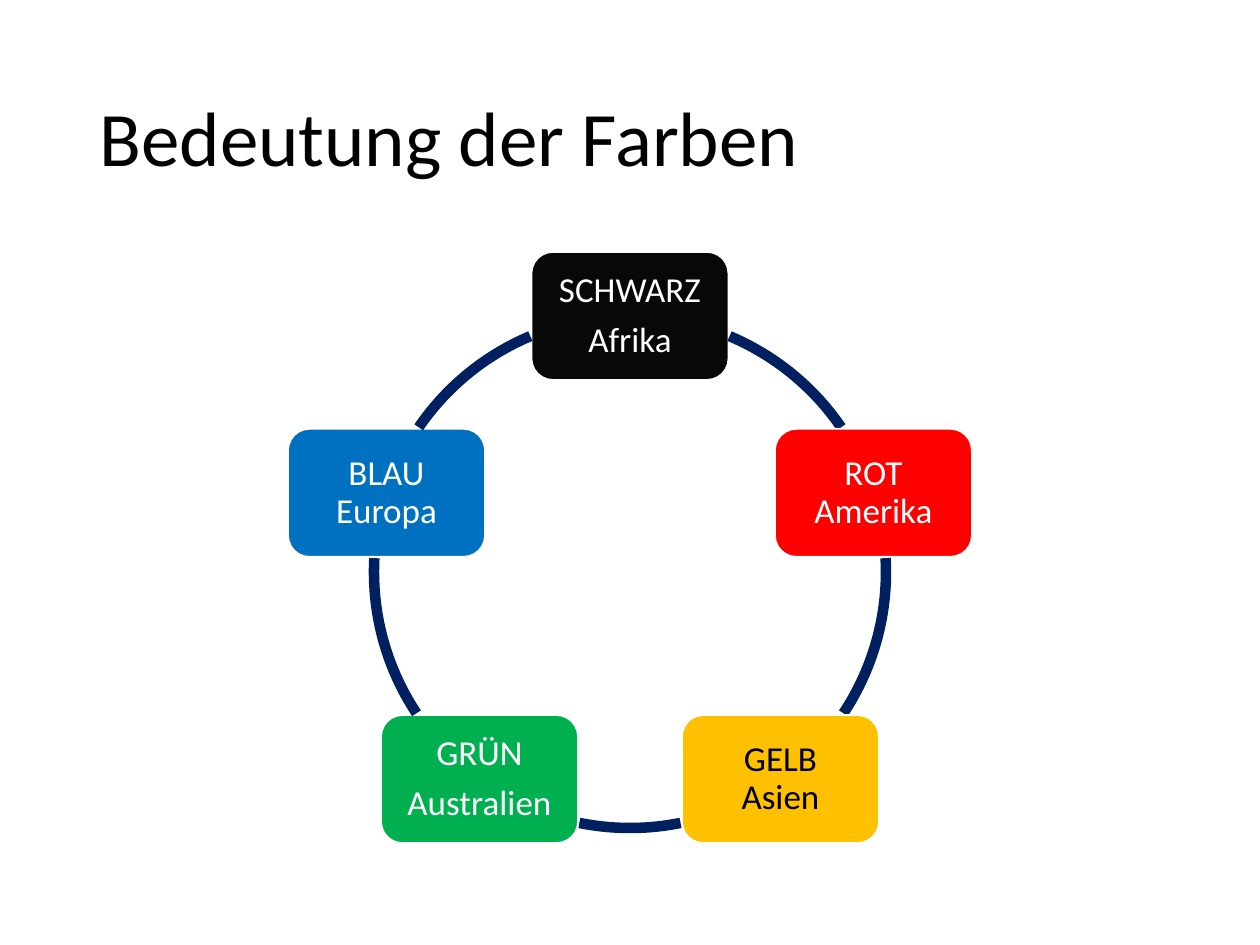
from dataclasses import dataclass
from math import cos, radians, sin

from pptx import Presentation
from pptx.dml.color import RGBColor as Rgb
from pptx.enum.shapes import MSO_SHAPE as Preset
from pptx.enum.text import MSO_ANCHOR as Anchor, PP_ALIGN as Align
from pptx.util import Emu, Pt

PX_PER_INCH = 126


@dataclass(frozen=True)
class Theme:
    font: str = "Calibri"
    title_size: int = 44
    box_size: int = 20
    paragraph_gap: int = 7
    line_spacing: float = 0.9
    arc_width: int = 6
    border_width: int = 1
    dark: str = "000000"
    light: str = "FFFFFF"
    ring: str = "002060"
    black: str = "080808"
    red: str = "FF0000"
    yellow: str = "FFC000"
    green: str = "00B050"
    blue: str = "0070C0"


THEME = Theme()

# Ring and box geometry in px
CENTER_X, CENTER_Y, RADIUS = 630, 572, 256
BOX_W, BOX_H, BOX_INSET = 197, 128, 16

# Colour meanings, clockwise from the top: paragraphs, fill, text colour
CONTINENTS = [
    (("SCHWARZ", "Afrika"), THEME.black, THEME.light),
    (("ROT\vAmerika",), THEME.red, THEME.light),
    (("GELB\vAsien",), THEME.yellow, THEME.dark),
    (("GRÜN", "Australien"), THEME.green, THEME.light),
    (("BLAU\vEuropa",), THEME.blue, THEME.light),
]
# Visible ring pieces after each box, in degrees clockwise from the top
ARCS = [(22.9, 55.6), (86.9, 123.5), (168.6, 191.4), (236.5, 273.1), (304.4, 337.1)]


def px(length):
    return Emu(round(length * 914400 / PX_PER_INCH))


def style_paragraph(paragraph, size, color, align):
    paragraph.alignment = align
    paragraph.line_spacing = THEME.line_spacing
    for run in paragraph.runs:
        run.font.name = THEME.font
        run.font.size = Pt(size)
        run.font.color.rgb = Rgb.from_string(color)


def set_title(slide, text):
    title = slide.shapes.title
    title.left, title.top, title.width, title.height = map(px, (87, 50, 1086, 183))
    title.text_frame.text = text
    title.text_frame.vertical_anchor = Anchor.MIDDLE
    style_paragraph(title.text_frame.paragraphs[0], THEME.title_size, THEME.dark, Align.LEFT)


def add_continent(slide, angle, lines, fill, text_color):
    center_x = CENTER_X + RADIUS * sin(radians(angle))
    center_y = CENTER_Y - RADIUS * cos(radians(angle))
    box = slide.shapes.add_shape(
        Preset.ROUNDED_RECTANGLE,
        px(center_x - BOX_W / 2), px(center_y - BOX_H / 2), px(BOX_W), px(BOX_H))
    box.shadow.inherit = False
    box.fill.solid()
    box.fill.fore_color.rgb = Rgb.from_string(fill)
    box.line.color.rgb = Rgb.from_string(THEME.light)
    box.line.width = Pt(THEME.border_width)

    label = box.text_frame
    label.word_wrap = True
    label.vertical_anchor = Anchor.MIDDLE
    label.margin_left = label.margin_right = px(BOX_INSET)
    label.margin_top = label.margin_bottom = px(BOX_INSET)
    for index, line in enumerate(lines):
        paragraph = label.add_paragraph() if index else label.paragraphs[0]
        paragraph.text = line
        paragraph.space_after = Pt(THEME.paragraph_gap)
        style_paragraph(paragraph, THEME.box_size, text_color, Align.CENTER)


def add_ring_arc(slide, start, end):
    arc = slide.shapes.add_shape(
        Preset.ARC, px(CENTER_X - RADIUS), px(CENTER_Y - RADIUS),
        px(2 * RADIUS), px(2 * RADIUS))
    arc.shadow.inherit = False
    arc.fill.background()
    arc.line.color.rgb = Rgb.from_string(THEME.ring)
    arc.line.width = Pt(THEME.arc_width)
    # Arc angles count from three o'clock; one degree is 0.6 adjustment units
    for index, angle in enumerate((start, end)):
        arc.adjustments[index] = (angle - 90) % 360 * 0.6


def main():
    prs = Presentation()
    prs.slide_width, prs.slide_height = px(1260), px(945)
    slide = prs.slides.add_slide(prs.slide_layouts[5])
    set_title(slide, "Bedeutung der Farben")

    # Boxes at equal angles, each followed by its piece of the ring
    step = 360 / len(CONTINENTS)
    for index, (continent, arc) in enumerate(zip(CONTINENTS, ARCS)):
        add_continent(slide, index * step, *continent)
        add_ring_arc(slide, *arc)

    prs.save("out.pptx")


if __name__ == "__main__":
    main()
